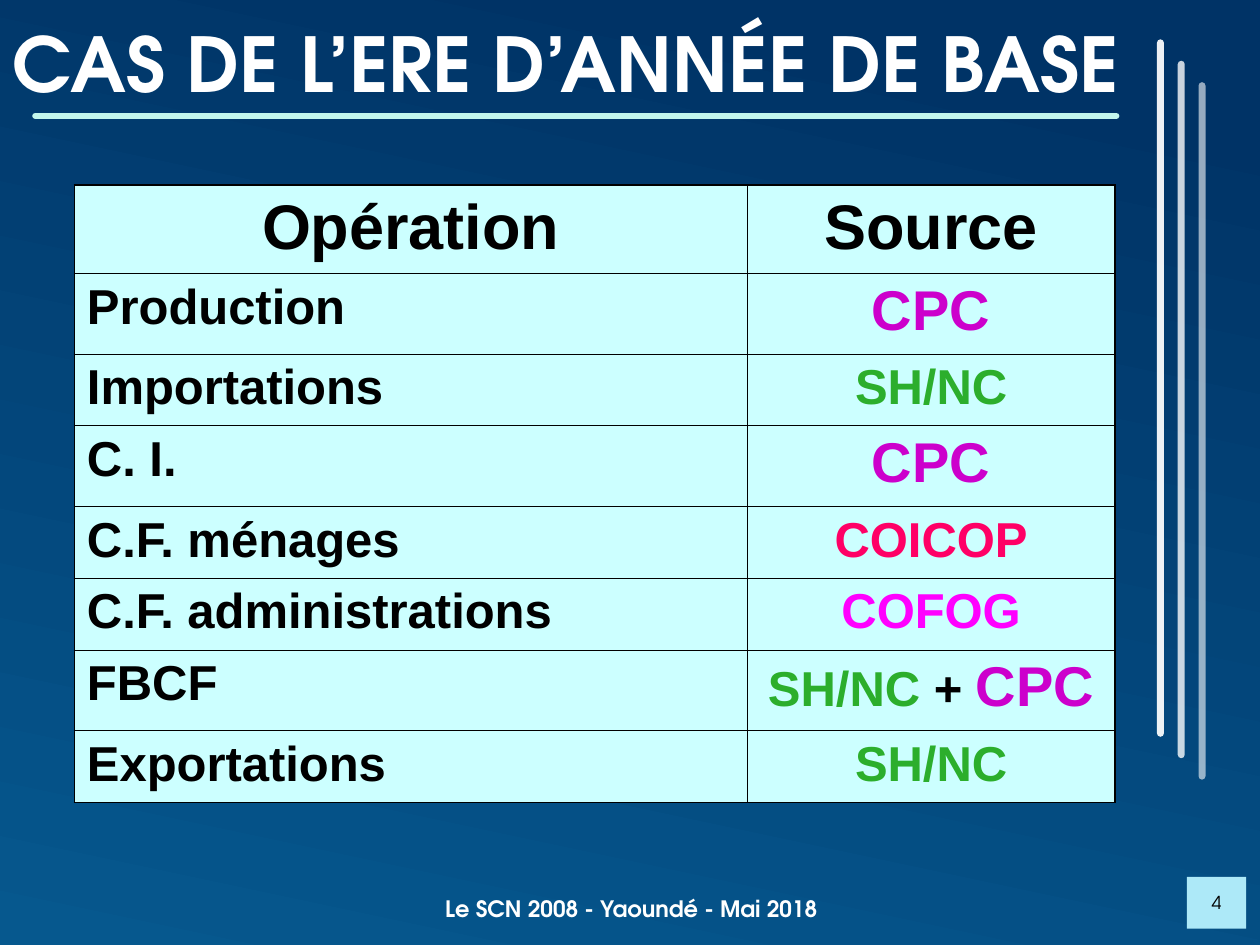
import pptx
import pptx.util
import pptx.dml.color
import pptx.enum.shapes
import pptx.enum.text
import pptx.oxml
from lxml import etree
from pptx.util import Inches

COLORS = {
    "night": "003366", "sea": "06588E", "white": "FFFFFF", "mint": "C3F7ED",
    "badge": "ADE9F8", "cell": "CCFFFF", "black": "000000", "purple": "CC00CC",
    "green": "2CAE2C", "red": "FF0066", "magenta": "FF00FF",
}
RGB = {name: pptx.dml.color.RGBColor.from_string(code) for name, code in COLORS.items()}
TITLE_FONT = "TeX Gyre Adventor"
CENTER = pptx.enum.text.PP_ALIGN.CENTER
LEFT = pptx.enum.text.PP_ALIGN.LEFT
MIDDLE = pptx.enum.text.MSO_ANCHOR.MIDDLE


def write(paragraph, runs, align, font_name, bold=True):
    """Add runs given as (text, size in points, color name)."""
    paragraph.alignment = align
    for text, size, color in runs:
        run = paragraph.add_run()
        run.text = text
        formats = {"name": font_name, "size": pptx.util.Pt(size), "bold": bold}
        for attribute, value in formats.items():
            setattr(run.font, attribute, value)
        run.font.color.rgb = RGB[color]


def add_rule(shapes, ends, color, width, opacity=100):
    """Draw a straight round-capped line without shadow."""
    rule = shapes.add_connector(
        pptx.enum.shapes.MSO_CONNECTOR.STRAIGHT, *[Inches(value) for value in ends])
    rule.line.color.rgb = RGB[color]
    rule.line.width = pptx.util.Pt(width)
    properties = rule.line._get_or_add_ln()
    properties.set("cap", "rnd")
    if opacity < 100:
        tint = properties.find(".//" + pptx.oxml.ns.qn("a:srgbClr"))
        etree.SubElement(tint, pptx.oxml.ns.qn("a:alpha"), val=str(opacity * 1000))
    etree.SubElement(rule._element.spPr, pptx.oxml.ns.qn("a:effectLst"))


deck = pptx.Presentation()
deck.slide_width, deck.slide_height = Inches(10), Inches(7.5)
slide = deck.slides.add_slide(deck.slide_layouts[5])

# Background
backdrop = slide.background.fill
backdrop.gradient()
backdrop.gradient_angle = 360 - 102
for stop, (position, color) in zip(backdrop.gradient_stops, [(0.1, "night"), (1, "sea")]):
    stop.position = position
    stop.color.rgb = RGB[color]

# Decorative lines
for index, opacity in enumerate([93, 79, 58]):
    x, top = 9.21 + index * 0.165, 0.34 + index * 0.17
    add_rule(slide.shapes, (x, top, x, top + 5.48), "white", 4, opacity)
add_rule(slide.shapes, (0.28, 0.92, 8.86, 0.92), "mint", 3.5)

# Title
title = slide.shapes.title
title.left, title.top, title.width, title.height = 0, 0, Inches(10), Inches(0.99)
title.text_frame.auto_size = pptx.enum.text.MSO_AUTO_SIZE.NONE
title.text_frame.vertical_anchor = MIDDLE
write(title.text_frame.paragraphs[0], [("CAS DE L’ERE D’ANNÉE DE BASE", 43.2, "white")],
      LEFT, TITLE_FONT)

# Footer and page number
footer = slide.shapes.add_textbox(Inches(2.03), Inches(7.05), Inches(5.96), Inches(0.32))
footer.text_frame.word_wrap = True
write(footer.text_frame.paragraphs[0], [("Le SCN 2008 - Yaoundé - Mai 2018", 12.9, "white")],
      CENTER, TITLE_FONT)

page_badge = slide.shapes.add_shape(
    pptx.enum.shapes.MSO_SHAPE.RECTANGLE,
    Inches(9.42), Inches(6.96), Inches(0.47), Inches(0.41))
page_badge.shadow.inherit = False
page_badge.fill.solid()
page_badge.fill.fore_color.rgb = RGB["badge"]
page_badge.line.fill.background()
page_badge.text_frame.vertical_anchor = MIDDLE
write(page_badge.text_frame.paragraphs[0], [("4", 10.2, "black")], CENTER, TITLE_FONT, False)

# Table of operations and their source classifications
CPC = ("CPC", 32, "purple")
SH_NC = ("SH/NC", 28, "green")
sources = [
    ("Production", [CPC]),
    ("Importations", [SH_NC]),
    ("C. I.", [CPC]),
    ("C.F. ménages", [("COICOP", 28, "red")]),
    ("C.F. administrations", [("COFOG", 28, "magenta")]),
    ("FBCF", [SH_NC, (" + ", 28, "black"), CPC]),
    ("Exportations", [SH_NC]),
]
rows = [([("Opération", 36, "black")], [("Source", 36, "black")])]
rows += [([(operation, 28, "black")], source) for operation, source in sources]
column_widths = [5.34, 2.92]

table = slide.shapes.add_table(
    len(rows), len(column_widths), Inches(0.59), Inches(1.47), Inches(8.26), Inches(4.9)).table
table.first_row = table.horz_banding = False
for column, width in zip(table.columns, column_widths):
    column.width = Inches(width)

for row_index, row in enumerate(rows):
    is_header = row_index == 0
    has_large_source = CPC in row[1]
    table.rows[row_index].height = Inches(0.7 if is_header else 0.64 if has_large_source else 0.57)
    for column_index, runs in enumerate(row):
        cell = table.cell(row_index, column_index)
        cell.margin_top = Inches(0.09 if is_header else 0.08)
        cell.fill.solid()
        cell.fill.fore_color.rgb = RGB["cell"]
        paragraph = cell.text_frame.paragraphs[0]
        paragraph.line_spacing = 0.93
        write(paragraph, runs, CENTER if is_header or column_index else LEFT, "Arial")

        outer_sides = {
            "L": column_index == 0, "R": column_index == len(row) - 1,
            "T": is_header, "B": row_index == len(rows) - 1,
        }
        cell_properties = cell._tc.get_or_add_tcPr()
        for position, (side, is_outer) in enumerate(outer_sides.items()):
            width = pptx.util.Pt(1.08 if is_outer else 0.45)
            cell_properties.insert(position, pptx.oxml.parse_xml(
                f'<a:ln{side} {pptx.oxml.ns.nsdecls("a")} w="{width}"><a:solidFill>'
                f'<a:srgbClr val="{COLORS["black"]}"/></a:solidFill></a:ln{side}>'))

deck.save("out.pptx")
